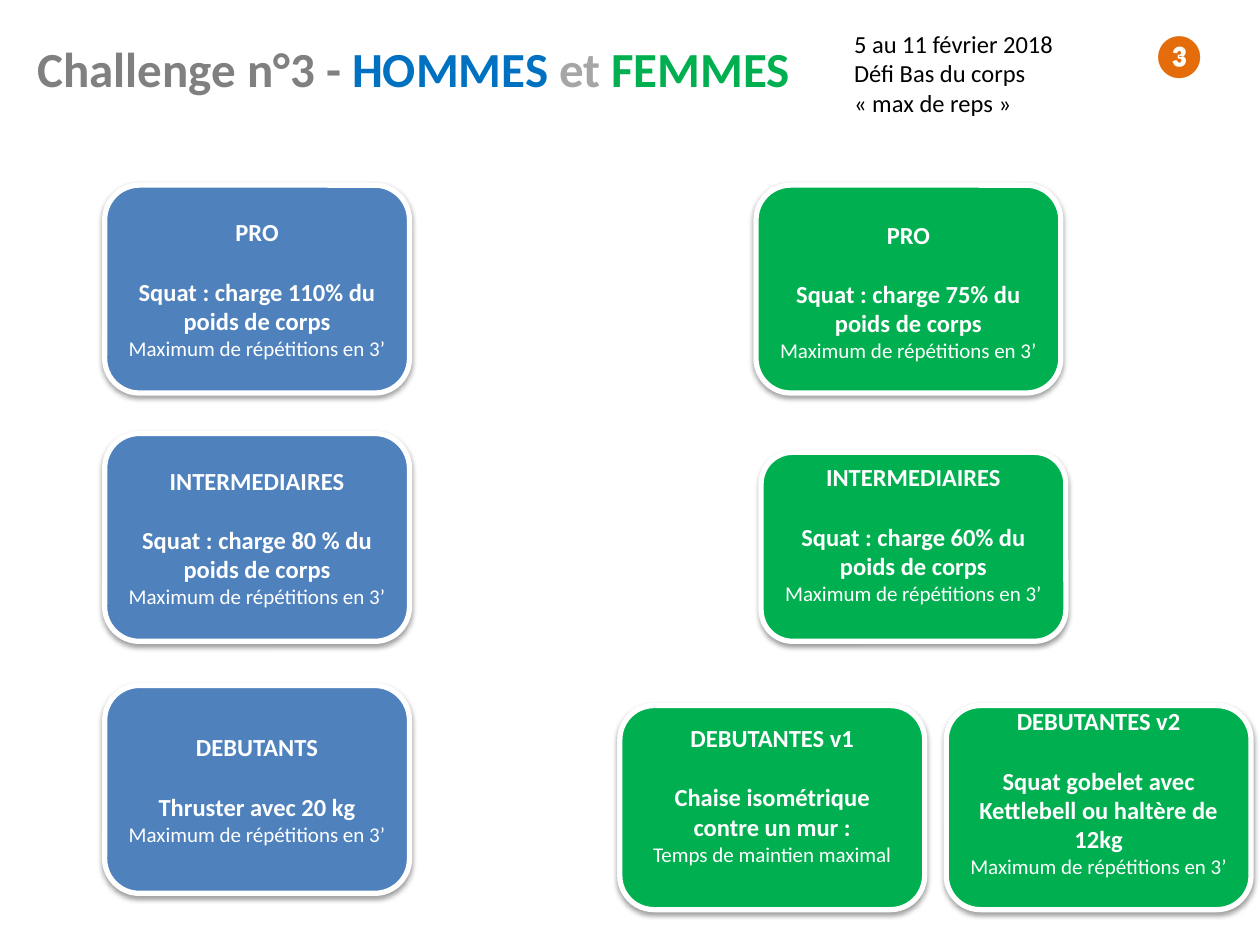
import dataclasses

import lxml.etree
import pptx
import pptx.dml.color
import pptx.enum.shapes
import pptx.enum.text
import pptx.oxml.ns
import pptx.util

Pt = pptx.util.Pt
Anchor = pptx.enum.text.MSO_ANCHOR
Fit = pptx.enum.text.MSO_AUTO_SIZE


@dataclasses.dataclass(frozen=True)
class Theme:
    font: str = "Calibri"
    gray: str = "808080"
    light_gray: str = "A6A6A6"
    title_blue: str = "0070C0"
    blue: str = "4F81BD"
    green: str = "00B050"
    orange: str = "E46C0A"
    white: str = "FFFFFF"
    black: str = "000000"
    title: float = 28
    badge: float = 24
    body: float = 14
    small: float = 12
    body_line: float = 17.1
    small_line: float = 14.6


THEME = Theme()
REPS = "Maximum de répétitions en 3’"
CARD_WIDTH = 174.2


def color(value):
    return pptx.dml.color.RGBColor.from_string(value)


def add_span(para, text, size, tint, bold=False):
    span = para.add_run()
    span.text = text
    span.font.name = THEME.font
    span.font.size = Pt(size)
    span.font.bold = bold
    span.font.color.rgb = color(tint)


def add_text(page, box, lines, wrap=True, anchor=Anchor.TOP, fit=Fit.NONE):
    frame = page.shapes.add_textbox(*map(Pt, box)).text_frame
    frame.word_wrap = wrap
    frame.auto_size = fit
    frame.vertical_anchor = anchor
    for index, spans in enumerate(lines):
        para = frame.add_paragraph() if index else frame.paragraphs[0]
        for span in spans:
            add_span(para, *span)


def add_shadow(shape):
    shape.shadow.inherit = False
    qn = pptx.oxml.ns.qn
    effects = shape._element.spPr.find(qn("a:effectLst"))
    outer = lxml.etree.SubElement(
        effects, qn("a:outerShdw"), blurRad=str(Pt(3.1)), dist=str(Pt(1.6)),
        dir="5400000", rotWithShape="0")
    tint = lxml.etree.SubElement(outer, qn("a:srgbClr"), val=THEME.black)
    lxml.etree.SubElement(tint, qn("a:alpha"), val="38000")


def add_card(page, box, fill, level, exercise, measure, above=0, below=0):
    card = page.shapes.add_shape(
        pptx.enum.shapes.MSO_SHAPE.ROUNDED_RECTANGLE, *map(Pt, box))
    card.fill.solid()
    card.fill.fore_color.rgb = color(fill)
    card.line.color.rgb = color(THEME.white)
    card.line.width = Pt(3)
    add_shadow(card)
    frame = card.text_frame
    frame.word_wrap = True
    frame.vertical_anchor = Anchor.MIDDLE
    frame.margin_top = Pt(3.6 + above)
    frame.margin_bottom = Pt(3.6 + below)
    lines = [(level, THEME.body, True), (exercise, THEME.body, True),
             (measure, THEME.small, False)]
    for index, (text, size, bold) in enumerate(lines):
        para = frame.add_paragraph() if index else frame.paragraphs[0]
        para.alignment = pptx.enum.text.PP_ALIGN.CENTER
        add_span(para, text, size, THEME.white, bold)
    frame.paragraphs[0].space_after = Pt(THEME.body_line)


def add_header(page, left, top):
    add_text(page, (left, top, 680.4, 51.1), [[
        ("Challenge n°3 - ", THEME.title, THEME.gray, True),
        ("HOMMES ", THEME.title, THEME.title_blue, True),
        ("et ", THEME.title, THEME.light_gray, True),
        ("FEMMES", THEME.title, THEME.green, True),
    ]], anchor=Anchor.MIDDLE)
    add_text(page, (left + 636.5, top, 36, 36),
             [[("❸", THEME.badge, THEME.orange, True)]],
             wrap=False, fit=Fit.SHAPE_TO_FIT_TEXT)
    details = ["5 au 11 février 2018", "Défi Bas du corps", "« max de reps »"]
    add_text(page, (left + 466.6, top, 169.9, 58.3),
             [[(text, THEME.body, THEME.black)] for text in details],
             fit=Fit.SHAPE_TO_FIT_TEXT)


def add_men(page, left, height):
    levels = [
        (105.8, "PRO", "Squat : charge 110% du poids de corps"),
        (247.7, "INTERMEDIAIRES", "Squat : charge 80 % du poids de corps"),
        (391.7, "DEBUTANTS", "Thruster avec 20 kg"),
    ]
    for top, level, exercise in levels:
        add_card(page, (left, top, CARD_WIDTH, height), THEME.blue,
                 level, exercise, REPS)


def add_women(page):
    small, body = THEME.small_line, THEME.body_line
    levels = [
        (432, 105.8, 118.8, "PRO", "Squat : charge 75% du poids de corps",
         REPS, body - small, 0),
        (434.9, 258.5, 108, "INTERMEDIAIRES",
         "Squat : charge 60% du poids de corps", REPS, 0, small),
        (354.2, 403.2, 116.6, "DEBUTANTES v1",
         "Chaise isométrique contre un mur :", "Temps de maintien maximal",
         0, small),
        (540.7, 403.2, 116.6, "DEBUTANTES v2",
         "Squat gobelet avec Kettlebell ou haltère de 12kg", REPS, 0, body),
    ]
    for left, top, height, *content in levels:
        add_card(page, (left, top, CARD_WIDTH, height), THEME.green, *content)


def main():
    deck = pptx.Presentation()
    deck.slide_width, deck.slide_height = Pt(720), Pt(540)
    page = deck.slides.add_slide(deck.slide_layouts[6])
    add_header(page, 14.4, 13)
    add_men(page, 59.8, 118.8)
    add_women(page)
    deck.save("out.pptx")


if __name__ == "__main__":
    main()
